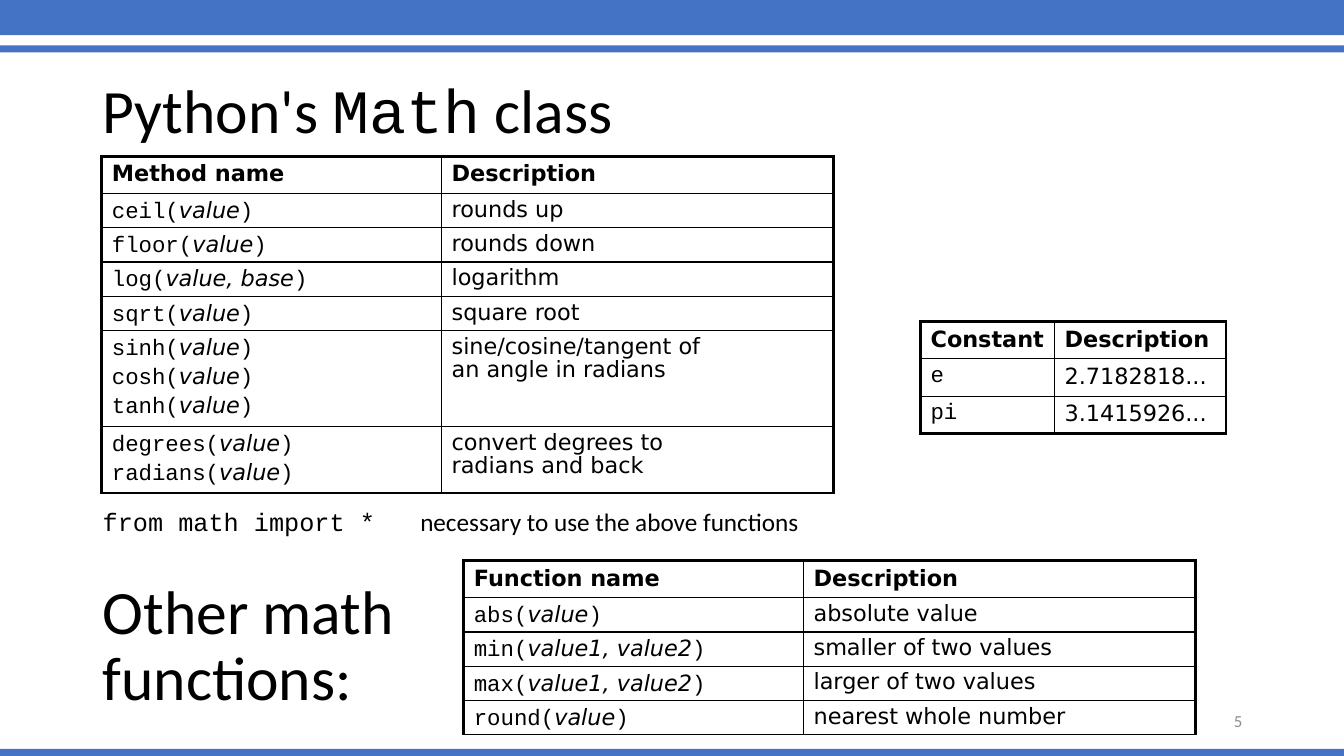
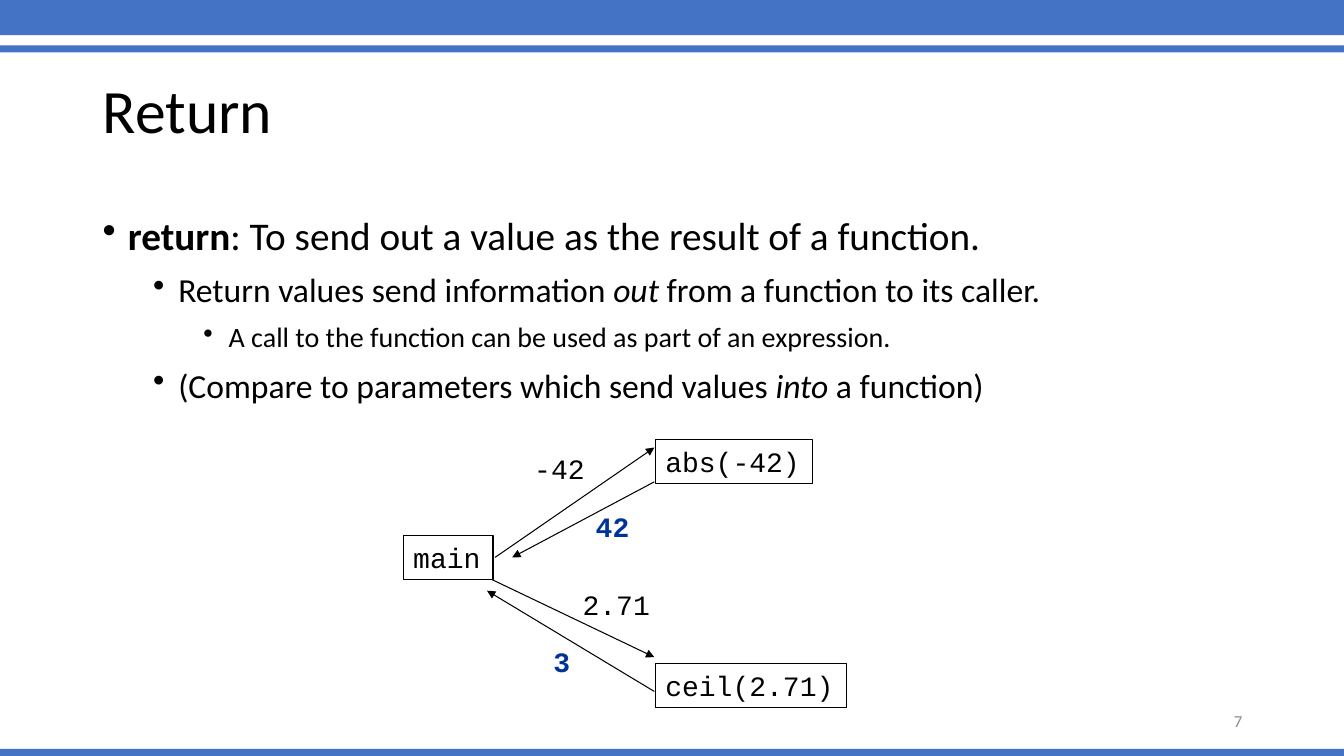
from dataclasses import dataclass

from lxml import etree
from pptx import Presentation
from pptx import util as u
from pptx.dml.color import RGBColor
from pptx.enum import shapes, text
from pptx.oxml import parse_xml
from pptx.oxml.ns import nsdecls, qn


@dataclass(frozen=True)
class Theme:
    ink: str = "000000"
    paper: str = "FFFFFF"
    band: str = "4472C4"
    result: str = "003399"
    muted: str = "8C8C8C"
    body: str = "Calibri"
    mono: str = "Courier New"
    sans: str = "DejaVu Sans"
    title_pt: float = 44
    level_pts: tuple = (28, 24, 20)
    code_pt: float = 20
    note_pt: float = 18
    cell_pt: float = 16
    number_pt: float = 12
    thin: float = 0.75
    inner: float = 1
    outer: float = 2.25


T = Theme()
SLIDE_W, SLIDE_H = 13.33, 7.5
LEFT = 0.92
BANDS = [(-0.03, 0.38), (0.45, 0.07), (7.43, 0.07)]
MONO = {"font": T.mono}
ITALIC = {"italic": True}
BOLD = {"bold": True}


def inches(*values):
    return [u.Inches(v) for v in values]


def rgb(color):
    return RGBColor.from_string(color)


def add_run(p, words, font=T.body, size=T.note_pt, color=T.ink, bold=False, italic=False):
    for i, line in enumerate(words.split("\n")):
        if i:
            p.add_line_break()
        r = p.add_run()
        r.text = line
        f = r.font
        f.name, f.size, f.bold, f.italic = font, u.Pt(size), bold, italic
        f.color.rgb = rgb(color)


def add_runs(p, runs, **fmt):
    """Runs are a plain string or a list of strings and (string, overrides) pairs."""
    for run in [runs] if isinstance(runs, str) else runs:
        words, changes = (run, {}) if isinstance(run, str) else run
        add_run(p, words, **{**fmt, **changes})


def add_text(s, box, runs, anchor=text.MSO_ANCHOR.TOP, align=None, spacing=None,
             before=0, wrap=True, **fmt):
    sp = s.shapes.add_textbox(*inches(*box))
    tf = sp.text_frame
    tf.word_wrap, tf.vertical_anchor = wrap, anchor
    p = tf.paragraphs[0]
    p.alignment, p.line_spacing, p.space_before = align, spacing, u.Pt(before)
    add_runs(p, runs, **fmt)
    return sp


def add_heading(s, box, runs):
    add_text(s, box, runs, anchor=text.MSO_ANCHOR.MIDDLE, spacing=0.9, size=T.title_pt)


def add_slide(prs, title, number):
    s = prs.slides.add_slide(prs.slide_layouts[6])
    for top, height in BANDS:
        sp = s.shapes.add_shape(shapes.MSO_SHAPE.RECTANGLE, *inches(0, top, SLIDE_W, height))
        sp.shadow.inherit = False
        sp.fill.solid()
        sp.fill.fore_color.rgb = rgb(T.band)
        sp.line.fill.background()
    add_heading(s, (LEFT, 0.4, 11.5, 1.45), title)
    add_text(s, (9.42, 6.95, 3, 0.4), str(number), anchor=text.MSO_ANCHOR.MIDDLE,
             align=text.PP_ALIGN.RIGHT, size=T.number_pt, color=T.muted)
    return s


def call(name, args="value"):
    """Runs for a call, with its arguments in italics."""
    return [(f"{name}(", MONO), (args, ITALIC), (")", MONO)]


def set_borders(cell, **widths):
    tcPr = cell._tc.get_or_add_tcPr()
    for side in "LRTB":
        tcPr.append(parse_xml(
            f'<a:ln{side} {nsdecls("a")} w="{u.Pt(widths[side])}"><a:solidFill>'
            f'<a:srgbClr val="{T.ink}"/></a:solidFill></a:ln{side}>'))


def space_before_percent(p, percent):
    p.space_before = u.Pt(0)
    spc = p._p.pPr.find(qn("a:spcBef"))
    spc.remove(spc[0])
    etree.SubElement(spc, qn("a:spcPct")).set("val", str(percent * 1000))


def fill_cell(cell, paragraphs, spacing, **fmt):
    cell.fill.solid()
    cell.fill.fore_color.rgb = rgb(T.paper)
    tf = cell.text_frame
    for i, runs in enumerate(paragraphs):
        p = tf.add_paragraph() if i else tf.paragraphs[0]
        p.line_spacing = spacing
        space_before_percent(p, 20)
        add_runs(p, runs, font=T.sans, size=T.cell_pt, **fmt)


def add_grid(s, left, top, cols, heights, header, rows, spacing=None, bottom=T.outer):
    """Each row pairs the paragraphs of its first cell with a description."""
    frame = s.shapes.add_table(len(heights), len(cols),
                               *inches(left, top, sum(cols), sum(heights)))
    table = frame.table
    table.first_row = table.horz_banding = False
    for col, width in zip(table.columns, cols):
        col.width = u.Inches(width)
    for row, height in zip(table.rows, heights):
        row.height = u.Inches(height)
    content = [([header], "Description")] + rows
    last_row, last_col = len(content) - 1, len(cols) - 1
    for i, (names, description) in enumerate(content):
        for j, paragraphs in enumerate((names, [description])):
            cell = table.cell(i, j)
            set_borders(cell,
                        L=T.inner if j else T.outer,
                        R=T.outer if j == last_col else T.inner,
                        T=T.inner if i else T.outer,
                        B=bottom if i == last_row else T.inner)
            fill_cell(cell, paragraphs, spacing if i else None, bold=i == 0)


def set_tab(p, position):
    tabs = etree.SubElement(p._p.get_or_add_pPr(), qn("a:tabLst"))
    etree.SubElement(tabs, qn("a:tab"), pos=str(u.Inches(position)), algn="l")


def add_bullets(s, box, items):
    """Items are (level, runs) pairs."""
    tf = s.shapes.add_textbox(*inches(*box)).text_frame
    tf.word_wrap = True
    for i, (level, runs) in enumerate(items):
        p = tf.add_paragraph() if i else tf.paragraphs[0]
        p.level, p.line_spacing = level, 1.1
        p.space_before = u.Pt(5 if level else 10)
        pPr = p._p.get_or_add_pPr()
        pPr.set("marL", str(u.Inches(0.25 + 0.5 * level)))
        pPr.set("indent", str(u.Inches(-0.25)))
        etree.SubElement(pPr, qn("a:buChar"), char="•")
        add_runs(p, runs, size=T.level_pts[level])


def add_code(s, box, words, **fmt):
    return add_text(s, box, words, before=5, wrap=False, font=T.mono, size=T.code_pt, **fmt)


def add_node(s, left, top, width, words):
    sp = add_code(s, (left, top, width, 0.44), words)
    sp.line.color.rgb = rgb(T.ink)
    sp.line.width = u.Pt(T.thin)


def add_arrow(s, start, end):
    c = s.shapes.add_connector(shapes.MSO_CONNECTOR.STRAIGHT, *inches(*start, *end))
    c.line.color.rgb = rgb(T.ink)
    c.line.width = u.Pt(T.thin)
    etree.SubElement(c.line._get_or_add_ln(), qn("a:tailEnd"), type="triangle")
    etree.SubElement(c._element.spPr, qn("a:effectLst"))


def build_math_slide(prs):
    s = add_slide(prs, ["Python's ", ("Math", MONO), " class"], 5)
    wide = (3.37, 3.89)
    add_grid(s, 1.01, 1.55, wide, [0.37] + [0.34] * 4 + [0.95, 0.66], "Method name", [
        ([call("ceil")], "rounds up"),
        ([call("floor")], "rounds down"),
        ([call("log", "value, base")], "logarithm"),
        ([call("sqrt")], "square root"),
        ([call(n) for n in ("sinh", "cosh", "tanh")],
         "sine/cosine/tangent of\nan angle in radians"),
        ([call(n) for n in ("degrees", "radians")],
         "convert degrees to\nradians and back"),
    ], spacing=0.9)
    add_grid(s, 9.13, 3.19, (1.33, 1.7), [0.37] * 3, "Constant", [
        ([[("e", MONO)]], "2.7182818..."),
        ([[("pi", MONO)]], "3.1415926..."),
    ])
    add_grid(s, 4.6, 5.56, wide, [0.37] + [0.34] * 4, "Function name", [
        ([call("abs")], "absolute value"),
        ([call("min", "value1, value2")], "smaller of two values"),
        ([call("max", "value1, value2")], "larger of two values"),
        ([call("round")], "nearest whole number"),
    ], spacing=0.9, bottom=T.inner)
    add_heading(s, (LEFT, 5.7, 5.39, 1.45), "Other math functions:")
    note = add_text(s, (LEFT, 4.97, 7.17, 0.4),
                    [("from math import *", MONO), "\tnecessary to use the above functions"])
    set_tab(note.text_frame.paragraphs[0], 3.15)


def build_return_slide(prs):
    s = add_slide(prs, "Return", 7)
    add_bullets(s, (LEFT, 2, 11.5, 4.76), [
        (0, [("return", BOLD), ": To send out a value as the result of a function."]),
        (1, ["Return values send information ", ("out ", ITALIC),
             "from a function to its caller."]),
        (2, "A call to the function can be used as part of an expression."),
        (1, ["(Compare to parameters which send values ", ("into", ITALIC), " a function)"]),
    ])
    for node in [(4, 5.31, 0.89, "main"), (6.5, 4.36, 1.56, "abs(-42)"),
                 (6.5, 6.58, 1.9, "ceil(2.71)")]:
        add_node(s, *node)
    for start, end in [((4.91, 5.53), (6.49, 4.44)), ((6.49, 4.78), (5.08, 5.53)),
                       ((4.88, 5.75), (6.49, 6.52)), ((6.49, 6.86), (4.83, 5.86))]:
        add_arrow(s, start, end)
    for left, top, width, words in [(5.2, 4.43, 0.71, "-42"), (5.68, 5.78, 0.88, "2.71")]:
        add_code(s, (left, top, width, 0.43), words)
    for left, top, width, words in [(5.81, 5.01, 0.55, "42"), (5.39, 6.34, 0.38, "3")]:
        add_code(s, (left, top, width, 0.43), words, color=T.result, bold=True)


def main():
    prs = Presentation()
    prs.slide_width, prs.slide_height = inches(SLIDE_W, SLIDE_H)
    build_math_slide(prs)
    build_return_slide(prs)
    prs.save("out.pptx")


if __name__ == "__main__":
    main()
